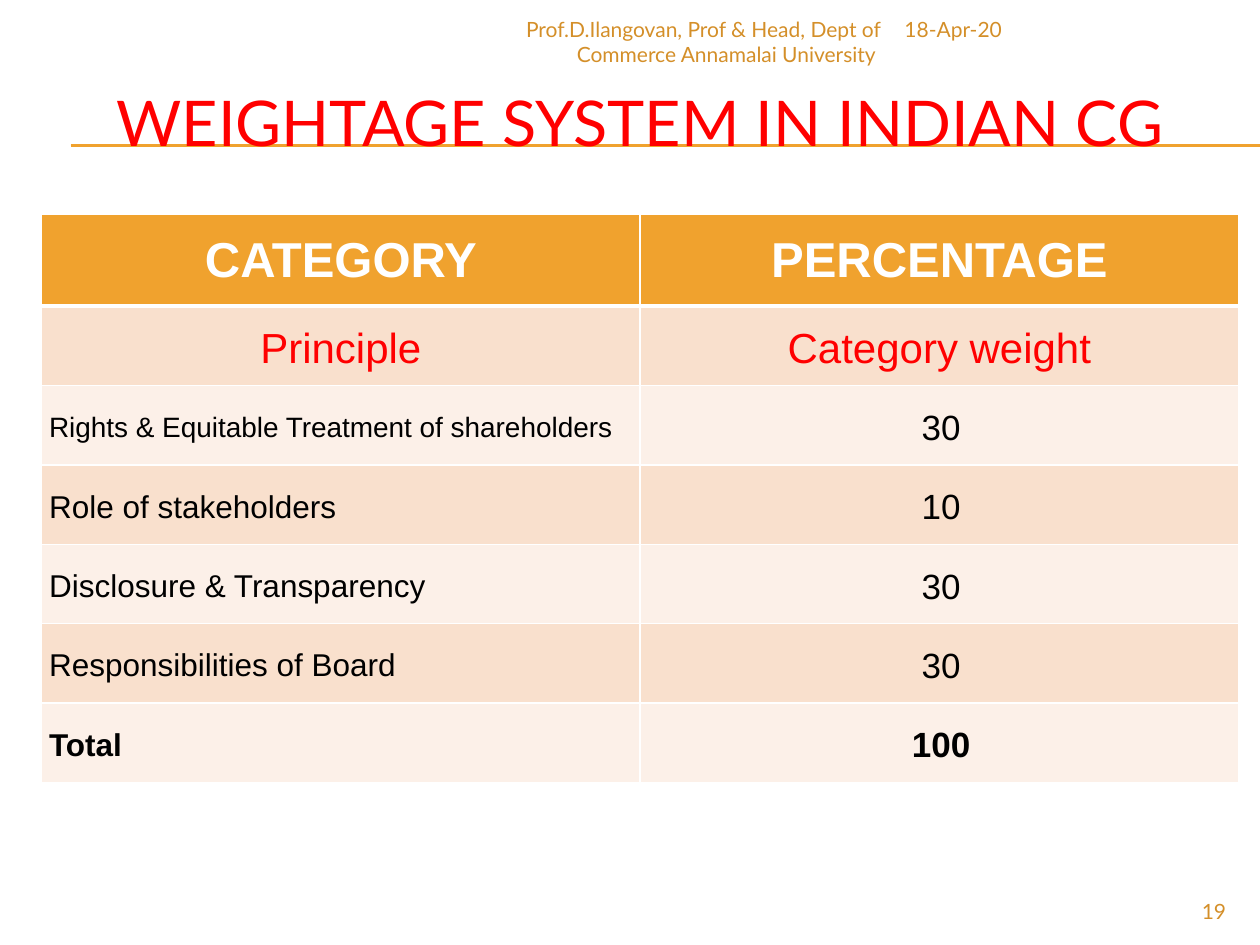
from dataclasses import dataclass
from lxml.etree import SubElement
from pptx import Presentation
from pptx.dml.color import RGBColor
from pptx.enum.text import MSO_ANCHOR as Anchor, PP_ALIGN as Align
from pptx.enum.shapes import MSO_CONNECTOR as Connector
from pptx.oxml.ns import qn
from pptx.util import Inches, Pt


@dataclass(frozen=True)
class Theme:
    accent: str = "F0A22E"
    footer: str = "D48F29"
    red: str = "FF0000"
    white: str = "FFFFFF"
    black: str = "000000"
    bands: tuple = ("F9E0CD", "FCF0E8")
    heading_font: str = "Lato"
    table_font: str = "Arial"
    title_size: int = 36
    header_size: int = 28
    subheader_size: int = 24
    value_size: int = 20
    label_size: int = 18
    long_label_size: int = 16
    footer_size: int = 12


THEME = Theme()
HEADER = ("CATEGORY", "PERCENTAGE")
HEADER_GAPS = (20, 13)
SUBHEADER = ("Principle", "Category weight")
WEIGHTS = (
    ("Rights & Equitable Treatment of shareholders", "30"),
    ("Role of stakeholders", "10"),
    ("Disclosure & Transparency", "30"),
    ("Responsibilities of Board", "30"),
    ("Total", "100"),
)


def write(frame, text, *, size, color, font=THEME.table_font, bold=False,
          align=Align.LEFT, spacing=None, after=None):
    paragraph = frame.paragraphs[0]
    paragraph.alignment = align
    if spacing is not None:
        paragraph.line_spacing = spacing
    if after is not None:
        paragraph.space_after = Pt(after)
    run = paragraph.add_run()
    run.text = text
    run.font.name = font
    run.font.size = Pt(size)
    run.font.bold = bold
    run.font.color.rgb = RGBColor.from_string(color)


def add_rule(slide, y):
    rule = slide.shapes.add_connector(
        Connector.STRAIGHT, Inches(0.56), Inches(y), Inches(10), Inches(y))
    rule.line.color.rgb = RGBColor.from_string(THEME.accent)
    rule.line.width = Pt(0.75)
    SubElement(rule._element.spPr, qn("a:effectLst"))


def add_title(slide, text):
    title = slide.shapes.title
    title.left, title.top = Inches(0.33), Inches(0.5)
    title.width, title.height = Inches(9.5), Inches(0.92)
    title.text_frame.vertical_anchor = Anchor.MIDDLE
    write(title.text_frame, text, size=THEME.title_size, color=THEME.red,
          font=THEME.heading_font, align=Align.CENTER)
    slide.shapes._spTree.append(title._element)


def add_footer(slide, text, left, top, width, height, align):
    box = slide.shapes.add_textbox(
        Inches(left), Inches(top), Inches(width), Inches(height))
    box.text_frame.word_wrap = True
    write(box.text_frame, text, size=THEME.footer_size, color=THEME.footer,
          font=THEME.heading_font, align=align)


def set_borders(cell, top=1, bottom=1):
    properties = cell._tc.get_or_add_tcPr()
    for side, width in (("L", 1), ("R", 1), ("T", top), ("B", bottom)):
        border = SubElement(properties, qn(f"a:ln{side}"), w=str(Pt(width)))
        fill = SubElement(border, qn("a:solidFill"))
        SubElement(fill, qn("a:srgbClr"), val=THEME.white)


def fill_cell(cell, text, fill, *, left=0.06, right=0.03, top=1, bottom=1, **style):
    set_borders(cell, top, bottom)
    cell.fill.solid()
    cell.fill.fore_color.rgb = RGBColor.from_string(fill)
    cell.margin_left, cell.margin_right = Inches(left), Inches(right)
    cell.margin_top = cell.margin_bottom = 0
    cell.vertical_anchor = Anchor.MIDDLE
    write(cell.text_frame, text, **style)


def add_weight_table(slide):
    row_count = len(WEIGHTS) + 2
    table = slide.shapes.add_table(
        row_count, 2, Inches(0.33), Inches(1.7), Inches(9.5), Inches(4.48)).table
    for index, row in enumerate(table.rows):
        row.height = Inches(0.63 if index else 0.73)

    for column, (heading, gap) in enumerate(zip(HEADER, HEADER_GAPS)):
        fill_cell(table.cell(0, column), heading, THEME.accent, left=0, right=0,
                  bottom=3, size=THEME.header_size, color=THEME.white, bold=True,
                  align=Align.CENTER, after=gap)
        fill_cell(table.cell(1, column), SUBHEADER[column], THEME.bands[0],
                  right=0.06, top=3, size=THEME.subheader_size, color=THEME.red,
                  align=Align.CENTER, spacing=1.15, after=10)

    for index, (category, weight) in enumerate(WEIGHTS, start=2):
        shared = dict(fill=THEME.bands[(index - 1) % 2], color=THEME.black,
                      bold=category == "Total", spacing=1.15, after=10)
        label_size = THEME.long_label_size if len(category) > 30 else THEME.label_size
        fill_cell(table.cell(index, 0), category, size=label_size, **shared)
        fill_cell(table.cell(index, 1), weight, size=THEME.value_size,
                  align=Align.CENTER, **shared)


def main():
    deck = Presentation()
    deck.slide_width, deck.slide_height = Inches(10), Inches(7.5)
    slide = deck.slides.add_slide(deck.slide_layouts[5])
    for y in (1.15, 1.16):
        add_rule(slide, y)
    add_title(slide, "WEIGHTAGE SYSTEM IN INDIAN CG")
    add_weight_table(slide)
    add_footer(slide, "Prof.D.Ilangovan, Prof & Head, Dept of Commerce Annamalai University ",
               3.92, 0.08, 3.17, 0.32, Align.RIGHT)
    add_footer(slide, "19", 9, 7.08, 0.83, 0.27, Align.RIGHT)
    add_footer(slide, "18-Apr-20", 7.08, 0.08, 2.75, 0.32, Align.LEFT)
    deck.save("out.pptx")


if __name__ == "__main__":
    main()
